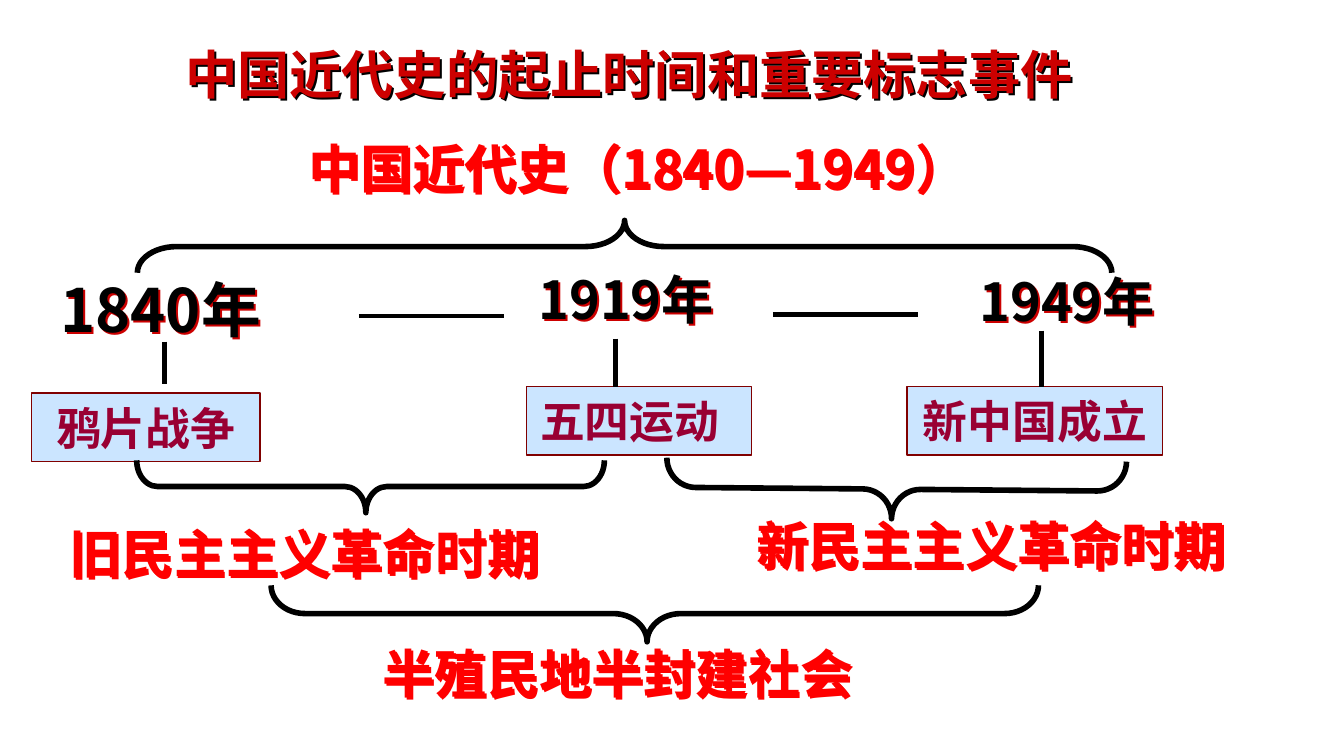
"""Builds a one-slide timeline of modern Chinese history."""
from dataclasses import dataclass

from lxml import etree
from pptx import Presentation
from pptx.dml.color import RGBColor
from pptx.enum.shapes import MSO_CONNECTOR, MSO_SHAPE
from pptx.enum.text import MSO_ANCHOR, PP_ALIGN
from pptx.oxml.ns import qn
from pptx.util import Emu, Inches, Pt

RECTANGLE = MSO_SHAPE.RECTANGLE
BRACE = MSO_SHAPE.LEFT_BRACE
STRAIGHT = MSO_CONNECTOR.STRAIGHT
MIDDLE = MSO_ANCHOR.MIDDLE
LEFT, CENTER = PP_ALIGN.LEFT, PP_ALIGN.CENTER

WIDTH = Inches(10)
HEIGHT = Emu(WIDTH * 9 // 16)
FONT = "Noto Sans CJK SC"
COLORS = {
    "title": "CC0000",
    "red": "FF0000",
    "black": "000000",
    "event": "990033",
    "event_fill": "99CCFF",
    "event_line": "800000",
}


@dataclass(frozen=True)
class Area:
    """Position and size in percent of the slide."""
    left: float
    top: float
    width: float
    height: float

    def lengths(self) -> tuple[Emu, Emu, Emu, Emu]:
        return (across(self.left), down(self.top),
                across(self.width), down(self.height))


@dataclass(frozen=True)
class Label:
    text: str
    area: Area
    color: str
    shadow: str
    size: int = 28
    align: PP_ALIGN = LEFT


@dataclass(frozen=True)
class Event:
    text: str
    area: Area
    align: PP_ALIGN = CENTER


@dataclass(frozen=True)
class Brace:
    area: Area
    rotation: float
    curve: float
    tip: float = 0.49


@dataclass(frozen=True)
class Line:
    left: float
    top: float
    right: float
    bottom: float
    weight: float


LABELS = [
    Label("中国近代史的起止时间和重要标志事件", Area(12.8, 4.7, 80.8, 10.13), "title", "black"),
    Label("中国近代史（1840—1949）", Area(12.2, 17.07, 70.5, 10.13), "red", "red", align=CENTER),
    Label("1840年", Area(3.5, 35.2, 26.6, 11.2), "black", "title", 32),
    Label("1919年", Area(39.1, 34.49, 20.3, 10.13), "black", "title"),
    Label("1949年", Area(71.9, 34.67, 18.1, 10.13), "black", "title"),
    Label("旧民主主义革命时期", Area(4.2, 68.09, 37.5, 10.13), "red", "red"),
    Label("新民主主义革命时期", Area(55.3, 66.95, 38.3, 10.13), "red", "red"),
    Label("半殖民地半封建社会", Area(27.5, 83.91, 53.3, 10.13), "red", "red"),
]
EVENTS = [
    Event("鸦片战争", Area(2.35, 52, 17, 9.07)),
    Event("五四运动", Area(39.2, 51.15, 16.7, 9.07), LEFT),
    Event("新中国成立", Area(67.5, 51.15, 19, 9.07)),
]
BRACES = [
    Brace(Area(10.22, 29.16, 72.5, 6.93), 90, 0.75, 0.5),
    Brace(Area(10.17, 60.89, 34.8, 6.93), 270, 0.4),
    Brace(Area(49.6, 60.8, 34.2, 7.82), 270.5, 0.49),
    Brace(Area(20.17, 77.42, 57.1, 7.47), 270, 0.6),
]
LINES = [
    Line(26.7, 41.78, 37.5, 41.78, 2.25),
    Line(57.5, 41.6, 68.3, 41.6, 2.25),
    Line(12.24, 45.2, 12.24, 50.84, 2.5),
    Line(45.8, 44.8, 45.8, 51.2, 2.5),
    Line(77.5, 43.73, 77.5, 51.2, 2.5),
]


def across(percent: float) -> Emu:
    return Emu(round(WIDTH * percent / 100))


def down(percent: float) -> Emu:
    return Emu(round(HEIGHT * percent / 100))


def rgb(name: str) -> RGBColor:
    return RGBColor.from_string(COLORS[name])


def write(shape, text: str, size: int, color: str, align: PP_ALIGN) -> None:
    frame = shape.text_frame
    frame.word_wrap = True
    frame.vertical_anchor = MIDDLE
    para = frame.paragraphs[0]
    para.alignment = align
    span = para.add_run()
    span.text = text
    span.font.size = Pt(size)
    span.font.bold = True
    span.font.name = FONT
    span.font.color.rgb = rgb(color)
    etree.SubElement(span.font._element, qn("a:ea"), typeface=FONT)


def add_label(page, label: Label) -> None:
    box = page.shapes.add_textbox(*label.area.lengths())
    write(box, label.text, label.size, label.color, label.align)
    effects = etree.SubElement(box._element.spPr, qn("a:effectLst"))
    shadow = etree.SubElement(effects, qn("a:outerShdw"), dist=str(Inches(0.02)),
                              dir="2700000", algn="ctr", rotWithShape="0")
    etree.SubElement(shadow, qn("a:srgbClr"), val=COLORS[label.shadow])


def add_event(page, event: Event) -> None:
    box = page.shapes.add_shape(RECTANGLE, *event.area.lengths())
    box.shadow.inherit = False
    box.fill.solid()
    box.fill.fore_color.rgb = rgb("event_fill")
    color = box._element.spPr.find(qn("a:solidFill"))[0]
    etree.SubElement(color, qn("a:alpha"), val="50000")
    box.line.color.rgb = rgb("event_line")
    box.line.width = Pt(0.75)
    write(box, event.text, 24, "event", event.align)


def add_brace(page, brace: Brace) -> None:
    left, top, span, depth = brace.area.lengths()
    shift = (span - depth) // 2
    shape = page.shapes.add_shape(BRACE, left + shift, top - shift, depth, span)
    shape.rotation = brace.rotation
    shape.adjustments[0] = brace.curve
    shape.adjustments[1] = brace.tip
    shape.shadow.inherit = False
    shape.fill.background()
    shape.line.color.rgb = rgb("black")
    shape.line.width = Pt(3)


def add_line(page, line: Line) -> None:
    connector = page.shapes.add_connector(
        STRAIGHT, across(line.left), down(line.top), across(line.right), down(line.bottom))
    connector.line.color.rgb = rgb("black")
    connector.line.width = Pt(line.weight)
    etree.SubElement(connector._element.spPr, qn("a:effectLst"))


def main() -> None:
    deck = Presentation()
    deck.slide_width, deck.slide_height = WIDTH, HEIGHT
    page = deck.slides.add_slide(deck.slide_layouts[6])
    for draw, items in ((add_label, LABELS), (add_event, EVENTS),
                        (add_line, LINES), (add_brace, BRACES)):
        for item in items:
            draw(page, item)
    deck.save("out.pptx")


if __name__ == "__main__":
    main()
